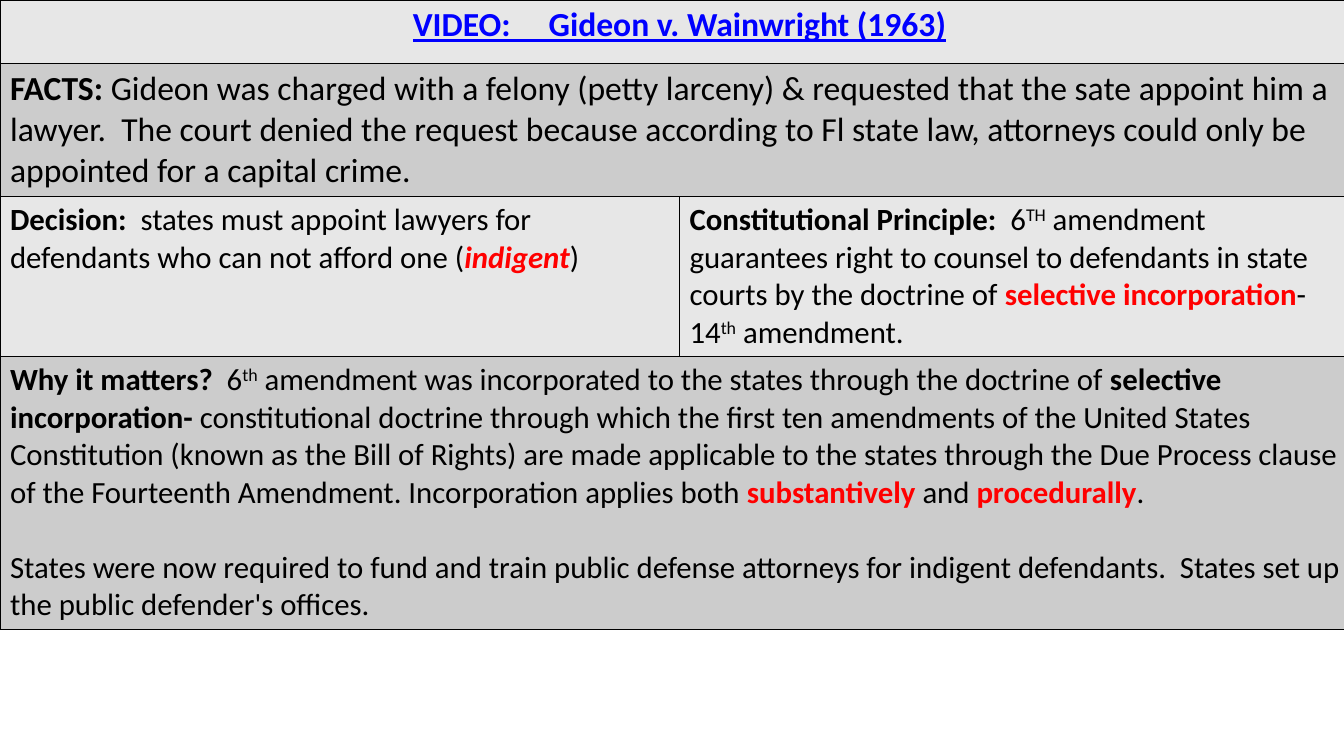
import pptx
import pptx.util
import pptx.dml.color
import pptx.enum.text
import pptx.oxml
import pptx.oxml.ns

Inches, Pt = pptx.util.Inches, pptx.util.Pt

COLORS = {"black": "000000", "red": "FF0000", "blue": "0000FF",
          "light": "E7E7E7", "dark": "CCCCCC"}
FONT = "Calibri"
COLS = [6.74, 6.74]
HEIGHT = 6.19

# A run is (text, marks): b bold, i italic, r red, u underlined blue, ^ raised.
TITLE = [("VIDEO:     Gideon v. Wainwright (1963)", "bu")]
FACTS = [
    ("FACTS: ", "b"),
    ("Gideon was charged with a felony (petty larceny) & requested that the "
     "sate appoint him a lawyer.  The court denied the request because "
     "according to Fl state law, attorneys could only be appointed for a "
     "capital crime.", ""),
]
DECISION = [
    ("Decision:  ", "b"),
    ("states must appoint lawyers for defendants who can not afford one (", ""),
    ("indigent", "bir"),
    (")", ""),
]
PRINCIPLE = [
    ("Constitutional Principle:", "b"),
    ("  6", ""),
    ("TH", "^"),
    (" amendment guarantees right to counsel to defendants in state courts by "
     "the doctrine of ", ""),
    ("selective incorporation", "br"),
    ("- 14", ""),
    ("th", "^"),
    (" amendment.", ""),
]
MATTERS = [
    ("Why it matters?  ", "b"),
    ("6", ""),
    ("th", "^"),
    (" amendment was incorporated to the states through the doctrine of ", ""),
    ("selective incorporation- ", "b"),
    ("constitutional doctrine through which the first ten amendments of the "
     "United States Constitution (known as the Bill of Rights) are made "
     "applicable to the states through the Due Process clause of the "
     "Fourteenth Amendment. Incorporation applies both ", ""),
    ("substantively", "br"),
    (" and ", ""),
    ("procedurally", "br"),
    (".", ""),
]
RESULT = [
    ("States were now required to fund and train public defense attorneys for "
     "indigent defendants.  States set up the public defender's offices.", ""),
]

# Each row: height, text size, fill, cells; each cell is a list of paragraphs.
ROWS = [
    (0.63, 24, "light", [[TITLE]]),
    (1.32, 24, "dark", [[FACTS]]),
    (1.02, 22, "light", [[DECISION], [PRINCIPLE]]),
    (2.24, 22, "dark", [[MATTERS, RESULT]]),
]


def color(name):
    return pptx.dml.color.RGBColor.from_string(COLORS[name])


def frame(cell, fill):
    """Give a cell thin black borders and a plain fill."""
    props = cell._tc.get_or_add_tcPr()
    for side in ("lnL", "lnR", "lnT", "lnB"):
        props.append(pptx.oxml.parse_xml(
            f'<a:{side} {pptx.oxml.ns.nsdecls("a")} w="12700"><a:solidFill>'
            f'<a:srgbClr val="{COLORS["black"]}"/></a:solidFill></a:{side}>'))
    cell.fill.solid()
    cell.fill.fore_color.rgb = color(fill)


def add_run(para, text, marks):
    run = para.add_run()
    run.text = text
    font = run.font
    font.bold = "b" in marks
    if "i" in marks:
        font.italic = True
    if "r" in marks:
        font.color.rgb = color("red")
    if "u" in marks:
        font.underline = True
        font.color.rgb = color("blue")
    if "^" in marks:
        font._element.set("baseline", "30000")


def write(cell, paras, size):
    text = cell.text_frame
    for num, runs in enumerate(paras):
        para = text.add_paragraph() if num else text.paragraphs[0]
        if num:
            para.space_before = Pt(27)
        para.font.name = FONT
        para.font.size = Pt(size)
        para.font.color.rgb = color("black")
        for words, marks in runs:
            add_run(para, words, marks)


def main():
    deck = pptx.Presentation()
    deck.slide_width, deck.slide_height = Inches(13.33), Inches(7.5)
    slide = deck.slides.add_slide(deck.slide_layouts[6])
    shape = slide.shapes.add_table(len(ROWS), len(COLS), 0, 0,
                                   Inches(sum(COLS)), Inches(HEIGHT))
    table = shape.table
    table.first_row = table.horz_banding = False
    for col, width in zip(table.columns, COLS):
        col.width = Inches(width)
    for num, (height, size, fill, cells) in enumerate(ROWS):
        table.rows[num].height = Inches(height)
        for pos in range(len(COLS)):
            frame(table.cell(num, pos), fill)
        if len(cells) == 1:
            table.cell(num, 0).merge(table.cell(num, len(COLS) - 1))
        for pos, paras in enumerate(cells):
            write(table.cell(num, pos), paras, size)
    shape.height = Inches(HEIGHT)
    title = table.cell(0, 0).text_frame.paragraphs[0]
    title.alignment = pptx.enum.text.PP_ALIGN.CENTER
    deck.save("out.pptx")


if __name__ == "__main__":
    main()
